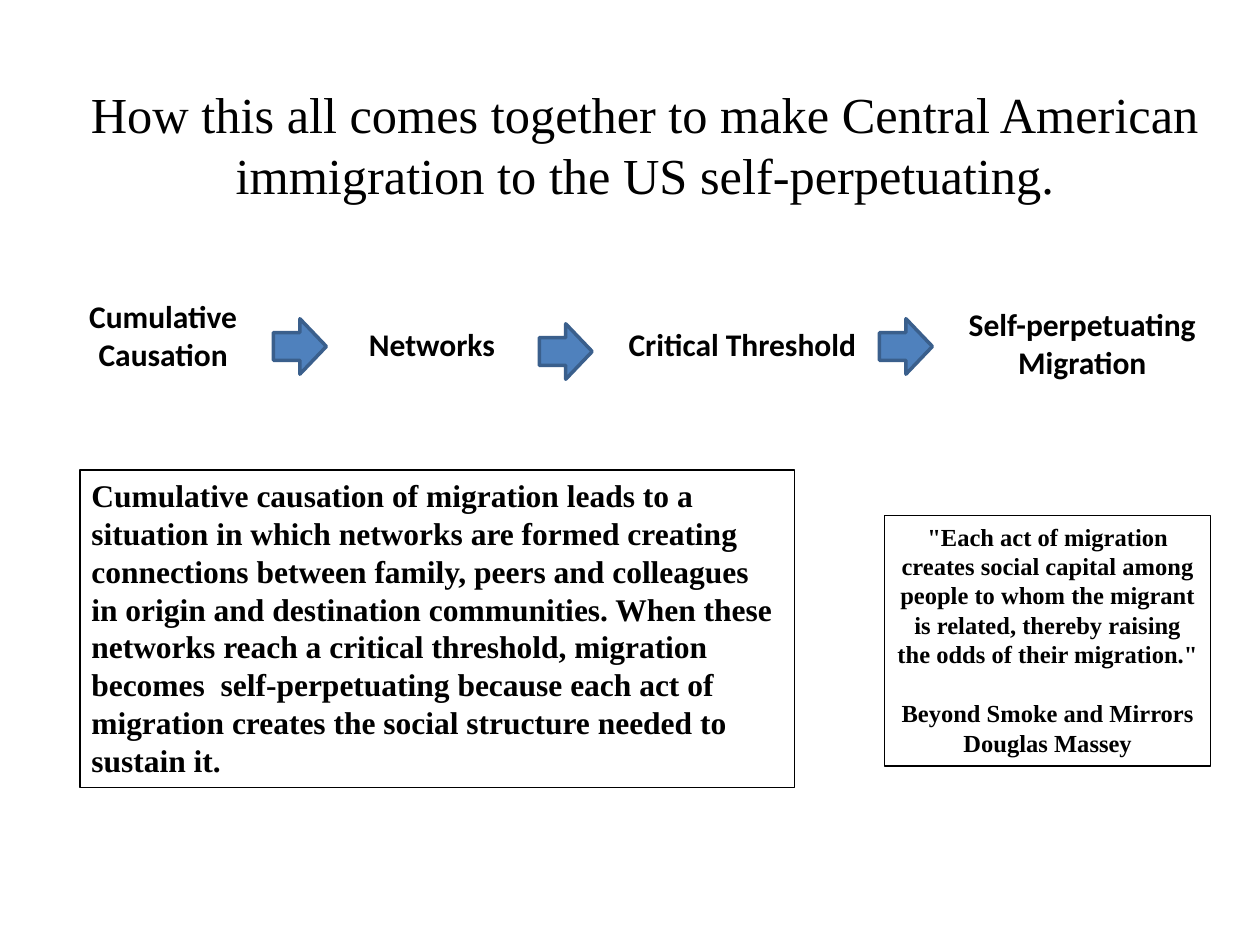
from pptx import Presentation
from pptx.dml.color import RGBColor
from pptx.enum.shapes import MSO_SHAPE
from pptx.enum.text import MSO_ANCHOR, MSO_AUTO_SIZE, PP_ALIGN
from pptx.util import Inches, Pt

RECTANGLE, RIGHT_ARROW = MSO_SHAPE.RECTANGLE, MSO_SHAPE.RIGHT_ARROW
TOP, MIDDLE = MSO_ANCHOR.TOP, MSO_ANCHOR.MIDDLE
LEFT, CENTER = PP_ALIGN.LEFT, PP_ALIGN.CENTER
FIXED, GROW = MSO_AUTO_SIZE.NONE, MSO_AUTO_SIZE.SHAPE_TO_FIT_TEXT

BLACK = RGBColor(0x00, 0x00, 0x00)
ARROW_FILL = RGBColor(0x4F, 0x81, 0xBD)
ARROW_EDGE = RGBColor(0x3A, 0x5F, 0x8C)
SERIF, SANS = "Times New Roman", "Calibri"

# The slide is a grid of 100 columns by 75 rows.
CELL = Inches(0.1)
COLUMNS, ROWS = 100, 75
SIDE_INSET = 0.9

TITLE = ("How this all comes together to make Central American "
         "immigration to the US self-perpetuating.")
# Left, top, width, height, alignment, wrapping, lines
STAGES = [
    (4.2, 23.1, 17.5, 7.1, CENTER, True, ["Cumulative Causation"]),
    (28.3, 25.3, 12.7, 4, LEFT, False, ["Networks"]),
    (48.9, 25.3, 20.2, 4, LEFT, False, ["Critical Threshold"]),
    (75.8, 23.7, 20.2, 7.1, CENTER, False, ["Self-perpetuating", "Migration"]),
]
ARROWS = [(21.7, 25.3), (42.8, 25.7), (69.8, 25.3)]
SUMMARY = ("Cumulative causation of migration leads to a situation in which "
           "networks are formed creating connections between family, peers and "
           "colleagues in origin and destination communities. When these "
           "networks reach a critical threshold, migration becomes  "
           "self-perpetuating because each act of migration creates the social "
           "structure needed to sustain it.")
QUOTE = ('"Each act of migration creates social capital among people to whom '
         'the migrant is related, thereby raising the odds of their migration."')
SOURCE = ["Beyond Smoke and Mirrors", "Douglas Massey"]


def grid(*cells):
    return [round(cell * CELL) for cell in cells]


def write(frame, lines, font_name, size, align, bold=True):
    frame.text = "\n".join(lines)
    for paragraph in frame.paragraphs:
        paragraph.alignment = align
        font = paragraph.font
        font.name, font.size, font.bold = font_name, Pt(size), bold
        font.color.rgb = BLACK


def add_title(slide):
    title = slide.shapes.title
    title.left, title.top, title.width, title.height = grid(5.8, 4.2, 90.8, 14.4)
    frame = title.text_frame
    frame.auto_size = FIXED
    frame.vertical_anchor = MIDDLE
    write(frame, [TITLE], SERIF, 28.8, CENTER, bold=False)


def add_stage(slide, left, top, width, height, align, wrap, lines):
    frame = slide.shapes.add_textbox(*grid(left, top, width, height)).text_frame
    frame.word_wrap = wrap
    frame.auto_size = GROW
    write(frame, lines, SANS, 18, align)


def add_arrow(slide, left, top):
    arrow = slide.shapes.add_shape(RIGHT_ARROW, *grid(left, top, 4.2, 4.4))
    arrow.shadow.inherit = False
    arrow.fill.solid()
    arrow.fill.fore_color.rgb = ARROW_FILL
    arrow.line.color.rgb = ARROW_EDGE
    arrow.line.width = Pt(2)


def add_framed_text(slide, area, lines, size, align):
    """Add an outlined box of bold serif text and return its paragraphs."""
    box = slide.shapes.add_shape(RECTANGLE, *grid(*area))
    box.shadow.inherit = False
    box.fill.background()
    box.line.color.rgb = BLACK
    box.line.width = Pt(0.75)
    frame = box.text_frame
    frame.margin_left, frame.margin_right = grid(SIDE_INSET, SIDE_INSET)
    frame.word_wrap = True
    frame.auto_size = GROW
    frame.vertical_anchor = TOP
    write(frame, lines, SERIF, size, align)
    return frame.paragraphs


def main():
    deck = Presentation()
    deck.slide_width, deck.slide_height = grid(COLUMNS, ROWS)
    slide = deck.slides.add_slide(deck.slide_layouts[5])

    add_title(slide)
    quote = add_framed_text(slide, (70.2, 40.9, 25.9, 19.9),
                            [QUOTE, *SOURCE], 14, CENTER)
    quote[1].space_before = Pt(17)
    add_framed_text(slide, (6.35, 37.3, 56.7, 25.2), [SUMMARY], 18, LEFT)
    for stage in STAGES:
        add_stage(slide, *stage)
    for left, top in ARROWS:
        add_arrow(slide, left, top)

    deck.save("out.pptx")


if __name__ == "__main__":
    main()
